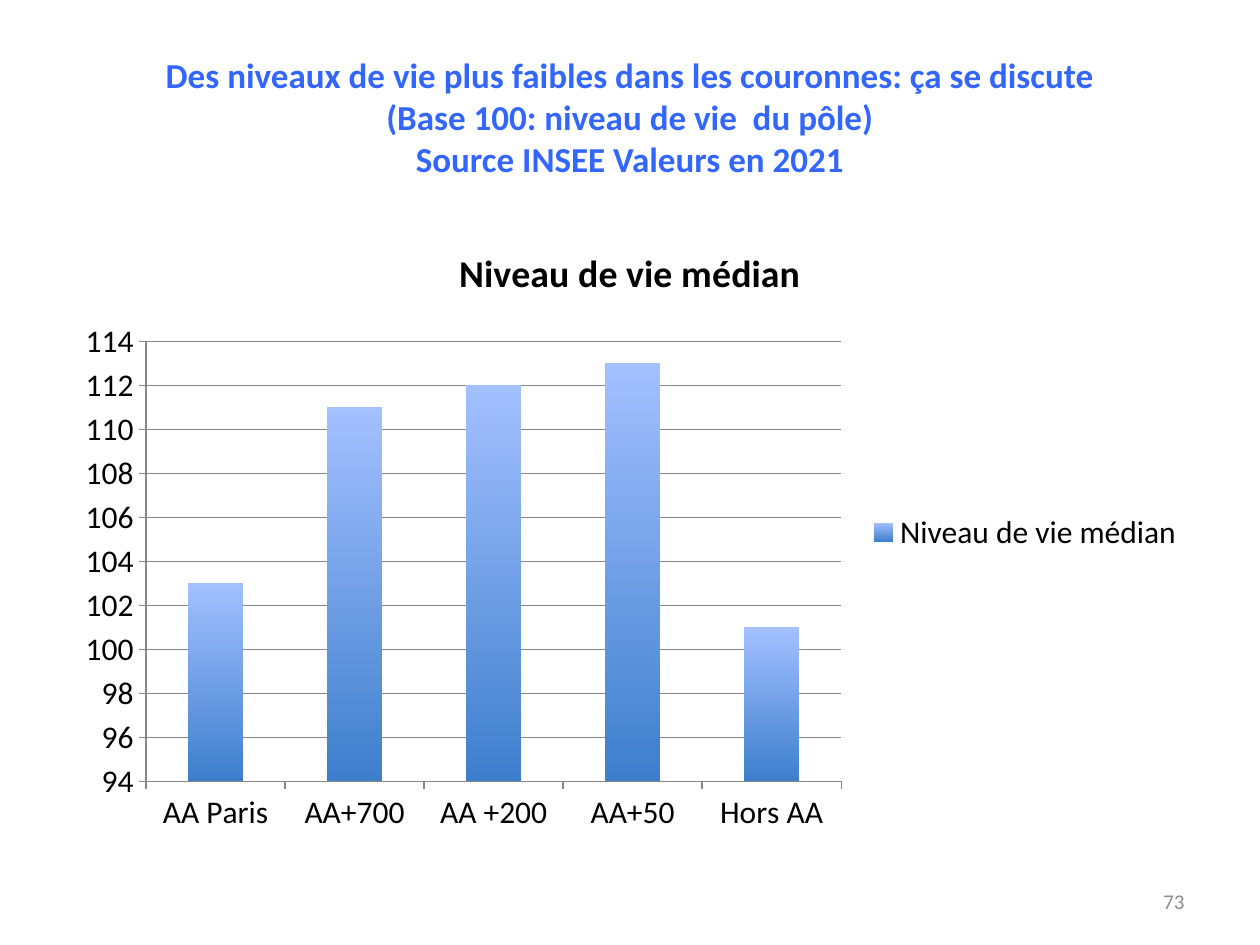
from dataclasses import dataclass

from pptx import Presentation
from pptx import util as u
from pptx.chart.data import CategoryChartData
from pptx.dml.color import RGBColor
from pptx.enum import chart as ch, text

WIDTH, HEIGHT = 10, 7.5
FONT = "Calibri"
TITLE_BLUE, BLACK, GREY = "3366FF", "000000", "8C8C8C"
AXIS_GREY = "878787"
BAR_BOTTOM, BAR_TOP = "3E7FCD", "A3C0FF"
SERIES = "Niveau de vie médian"
LEVELS = {"AA Paris": 103, "AA+700": 111, "AA +200": 112, "AA+50": 113, "Hors AA": 101}
TITLE_LINES = (
    "Des niveaux de vie plus faibles dans les couronnes: ça se discute",
    "(Base 100: niveau de vie  du pôle)",
    "Source INSEE Valeurs en 2021",
)


@dataclass(frozen=True)
class Box:
    left: float
    top: float
    width: float
    height: float

    def emu(self) -> tuple:
        return (u.Inches(self.left * WIDTH), u.Inches(self.top * HEIGHT),
                u.Inches(self.width * WIDTH), u.Inches(self.height * HEIGHT))


TITLE_BOX = Box(0.05, 0.04, 0.9, 1 / 6)
CHART_BOX = Box(0.05, 7 / 30, 0.9, 0.66)
NUMBER_BOX = Box(0.717, 0.927, 0.233, 0.053)


def color(value: str) -> RGBColor:
    return RGBColor.from_string(value)


def set_font(font, size: float, value: str, bold: bool = False) -> None:
    font.name, font.size, font.bold = FONT, u.Pt(size), bold
    font.color.rgb = color(value)


def write(sp, lines: tuple, size: float, value: str, align, bold: bool = False) -> None:
    tf = sp.text_frame
    tf.word_wrap = True
    tf.auto_size = text.MSO_AUTO_SIZE.NONE
    tf.vertical_anchor = text.MSO_ANCHOR.MIDDLE
    p = tf.paragraphs[0]
    for i, line in enumerate(lines):
        if i:
            p.add_line_break()
        p.add_run().text = line
    p.alignment = align
    set_font(p.font, size, value, bold)


def style_line(line) -> None:
    line.color.rgb = color(AXIS_GREY)
    line.width = u.Pt(0.75)


def add_level_chart(s) -> None:
    data = CategoryChartData()
    data.categories = list(LEVELS)
    data.add_series(SERIES, list(LEVELS.values()))
    chart = s.shapes.add_chart(ch.XL_CHART_TYPE.COLUMN_CLUSTERED, *CHART_BOX.emu(), data).chart
    set_font(chart.font, 18, BLACK)

    chart.has_title = True
    p = chart.chart_title.text_frame.paragraphs[0]
    p.text = SERIES
    set_font(p.font, 21.6, BLACK, True)
    chart.chart_title.include_in_layout = False
    chart.has_legend = True
    chart.legend.position = ch.XL_LEGEND_POSITION.RIGHT
    chart.legend.include_in_layout = False

    for axis in (chart.category_axis, chart.value_axis):
        axis.major_tick_mark = ch.XL_TICK_MARK.OUTSIDE
        axis.minor_tick_mark = ch.XL_TICK_MARK.NONE
        style_line(axis.format.line)
    values = chart.value_axis
    values.minimum_scale, values.maximum_scale, values.major_unit = 94, 114, 2
    values.has_major_gridlines = True
    style_line(values.major_gridlines.format.line)

    plot = chart.plots[0]
    plot.gap_width = 150
    plot.vary_by_categories = False
    fill = plot.series[0].format.fill
    fill.gradient()
    fill.gradient_angle = 90
    for stop, value in zip(fill.gradient_stops, (BAR_BOTTOM, BAR_TOP)):
        stop.color.rgb = color(value)


def main() -> None:
    prs = Presentation()
    prs.slide_width, prs.slide_height = u.Inches(WIDTH), u.Inches(HEIGHT)
    s = prs.slides.add_slide(prs.slide_layouts[5])
    title = s.shapes.title
    title.left, title.top, title.width, title.height = TITLE_BOX.emu()
    write(title, TITLE_LINES, 20, TITLE_BLUE, text.PP_ALIGN.CENTER, True)
    add_level_chart(s)
    number = s.shapes.add_textbox(*NUMBER_BOX.emu())
    write(number, ("73",), 12, GREY, text.PP_ALIGN.RIGHT)
    prs.save("out.pptx")


if __name__ == "__main__":
    main()
